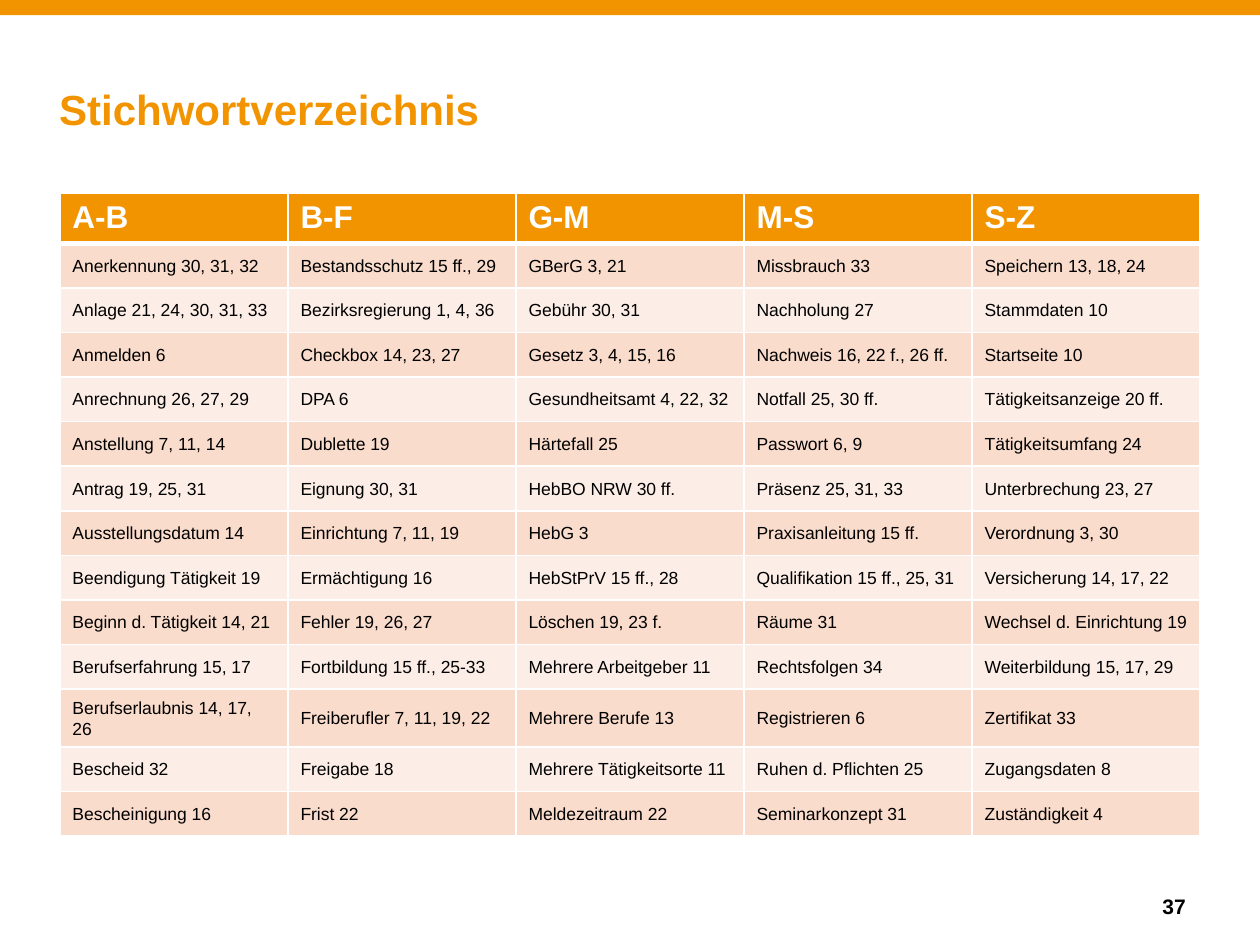
from collections import namedtuple
from dataclasses import dataclass

from lxml import etree
from pptx import Presentation
from pptx.dml.color import RGBColor
from pptx.enum.shapes import MSO_SHAPE
from pptx.enum.text import MSO_ANCHOR, PP_ALIGN
from pptx.oxml.ns import qn
from pptx.util import Inches, Pt

RECT = MSO_SHAPE.RECTANGLE
TOP, MIDDLE, BOTTOM = MSO_ANCHOR.TOP, MSO_ANCHOR.MIDDLE, MSO_ANCHOR.BOTTOM
LEFT, RIGHT = PP_ALIGN.LEFT, PP_ALIGN.RIGHT

Box = namedtuple("Box", "x y w h")


@dataclass(frozen=True)
class Theme:
    font: str = "Arial"
    accent: str = "F29400"
    bands: tuple = ("FADCCC", "FCEEE7")
    white: str = "FFFFFF"
    black: str = "000000"
    title: int = 24
    head: int = 18
    body: int = 10
    number: int = 12
    thin: int = 1
    thick: int = 3


THEME = Theme()

# The slide is a grid of 100 columns by 75 rows.
COLS, ROWS = 100, 75
UNIT = Inches(0.1)
ROW = 3.54

INDEX = {
    "A-B": [
        "Anerkennung 30, 31, 32", "Anlage 21, 24, 30, 31, 33", "Anmelden 6",
        "Anrechnung 26, 27, 29", "Anstellung 7, 11, 14", "Antrag 19, 25, 31",
        "Ausstellungsdatum 14", "Beendigung Tätigkeit 19",
        "Beginn d. Tätigkeit 14, 21", "Berufserfahrung 15, 17",
        "Berufserlaubnis 14, 17, 26", "Bescheid 32", "Bescheinigung 16",
    ],
    "B-F": [
        "Bestandsschutz 15 ff., 29", "Bezirksregierung 1, 4, 36",
        "Checkbox 14, 23, 27", "DPA 6", "Dublette 19", "Eignung 30, 31",
        "Einrichtung 7, 11, 19", "Ermächtigung 16", "Fehler 19, 26, 27",
        "Fortbildung 15 ff., 25-33", "Freiberufler 7, 11, 19, 22",
        "Freigabe 18", "Frist 22",
    ],
    "G-M": [
        "GBerG 3, 21", "Gebühr 30, 31", "Gesetz 3, 4, 15, 16",
        "Gesundheitsamt 4, 22, 32", "Härtefall 25", "HebBO NRW 30 ff.",
        "HebG 3", "HebStPrV 15 ff., 28", "Löschen 19, 23 f.",
        "Mehrere Arbeitgeber 11", "Mehrere Berufe 13",
        "Mehrere Tätigkeitsorte 11", "Meldezeitraum 22",
    ],
    "M-S": [
        "Missbrauch 33", "Nachholung 27", "Nachweis 16, 22 f., 26 ff.",
        "Notfall 25, 30 ff.", "Passwort 6, 9", "Präsenz 25, 31, 33",
        "Praxisanleitung 15 ff.", "Qualifikation 15 ff., 25, 31", "Räume 31",
        "Rechtsfolgen 34", "Registrieren 6", "Ruhen d. Pflichten 25",
        "Seminarkonzept 31",
    ],
    "S-Z": [
        "Speichern 13, 18, 24", "Stammdaten 10", "Startseite 10",
        "Tätigkeitsanzeige 20 ff.", "Tätigkeitsumfang 24",
        "Unterbrechung 23, 27", "Verordnung 3, 30", "Versicherung 14, 17, 22",
        "Wechsel d. Einrichtung 19", "Weiterbildung 15, 17, 29",
        "Zertifikat 33", "Zugangsdaten 8", "Zuständigkeit 4",
    ],
}


def grid(value):
    return round(value * UNIT)


def place(box):
    return [grid(value) for value in box]


def paint(fill, color):
    fill.solid()
    fill.fore_color.rgb = RGBColor.from_string(color)


def style(para, size, color, bold):
    para.font.name = THEME.font
    para.font.size = Pt(size)
    para.font.bold = bold
    para.font.color.rgb = RGBColor.from_string(color)


def edge(cell, side, width):
    """Draw one white border; call before the cell is filled."""
    line = etree.SubElement(cell._tc.get_or_add_tcPr(), qn("a:ln" + side),
                            w=str(Pt(width)))
    fill = etree.SubElement(line, qn("a:solidFill"))
    etree.SubElement(fill, qn("a:srgbClr"), val=THEME.white)


def add_bar(slide, box):
    bar = slide.shapes.add_shape(RECT, *place(box))
    bar.shadow.inherit = False
    paint(bar.fill, THEME.accent)
    bar.line.fill.background()


def add_label(slide, box, text, size, color, anchor=TOP, align=LEFT):
    frame = slide.shapes.add_textbox(*place(box)).text_frame
    frame.word_wrap = True
    frame.vertical_anchor = anchor
    frame.margin_left = frame.margin_right = 0
    frame.margin_top = frame.margin_bottom = 0
    para = frame.paragraphs[0]
    para.text = text
    para.alignment = align
    style(para, size, color, True)
    return para


def fill_cell(cell, text, row):
    head = row == 0
    for side in "LRTB":
        rule = (row, side) in ((0, "B"), (1, "T"))
        edge(cell, side, THEME.thick if rule else THEME.thin)
    paint(cell.fill, THEME.accent if head else THEME.bands[(row - 1) % 2])
    cell.vertical_anchor = MIDDLE
    para = cell.text_frame.paragraphs[0]
    para.text = text
    if head:
        style(para, THEME.head, THEME.white, True)
    else:
        para.line_spacing = 1.07
        para.space_after = Pt(8)
        style(para, THEME.body, THEME.black, False)


def add_index(slide, box, index):
    lists = [[head, *words] for head, words in index.items()]
    count = len(lists[0])
    table = slide.shapes.add_table(count, len(lists), *place(box)).table
    for col in table.columns:
        col.width = grid(box.w / len(lists))
    for row in table.rows:
        row.height = grid(box.h / count)
    for c, words in enumerate(lists):
        for r, text in enumerate(words):
            fill_cell(table.cell(r, c), text, r)


def main():
    deck = Presentation()
    deck.slide_width, deck.slide_height = grid(COLS), grid(ROWS)
    slide = deck.slides.add_slide(deck.slide_layouts[6])
    add_bar(slide, Box(0, 0, COLS, 1.2))
    title = add_label(slide, Box(4.7, 4.3, 66.3, 6.3), "Stichwortverzeichnis",
                      THEME.title, THEME.accent, anchor=BOTTOM)
    title.line_spacing = Pt(28)
    add_index(slide, Box(4.75, 15.3, 90.5, 14 * ROW), INDEX)
    add_label(slide, Box(73.9, 70.9, 20.2, 2.9), "37",
              THEME.number, THEME.black, align=RIGHT)
    deck.save("out.pptx")


if __name__ == "__main__":
    main()
